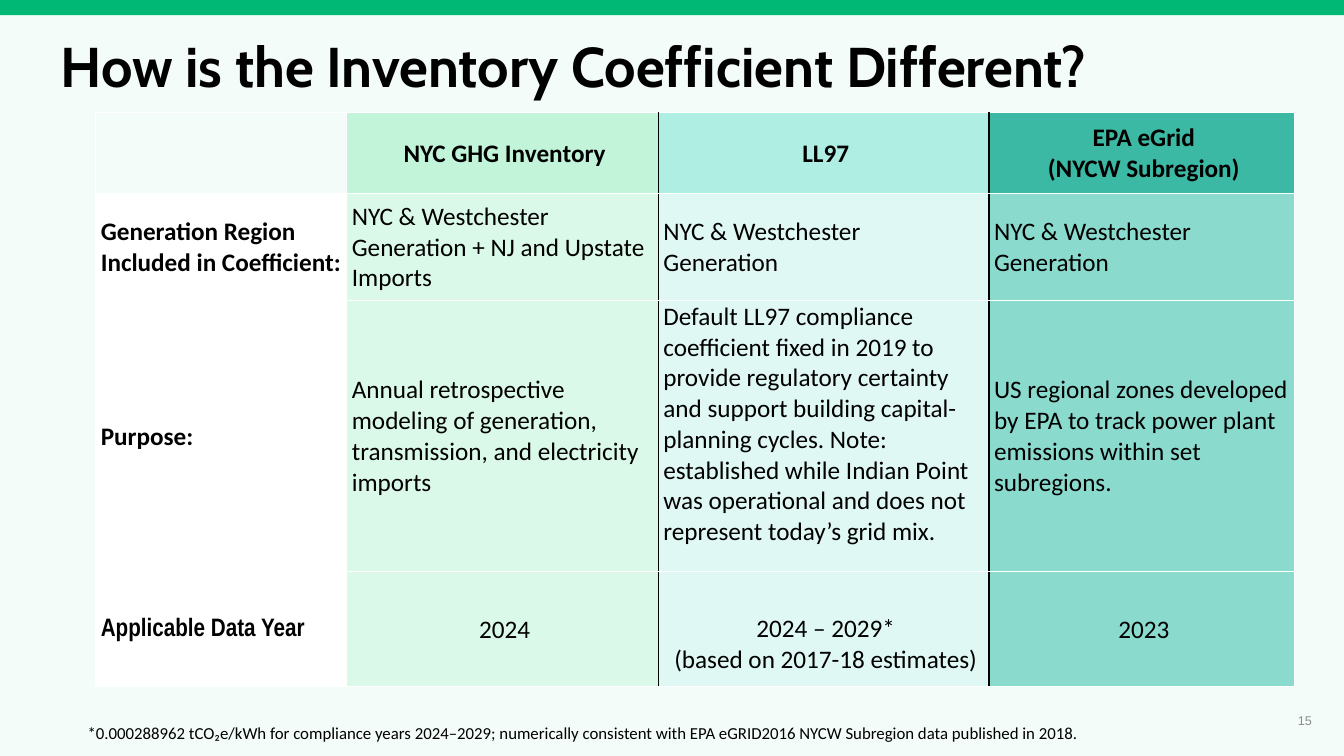
"""Build a slide comparing the NYC GHG Inventory, LL97 and EPA eGrid coefficients."""
from dataclasses import dataclass

from lxml.etree import SubElement
from pptx import Presentation
from pptx.dml.color import RGBColor
from pptx.enum.shapes import MSO_SHAPE
from pptx.enum.text import MSO_ANCHOR as Anchor, MSO_AUTO_SIZE as AutoSize, PP_ALIGN as Align
from pptx.oxml.ns import qn
from pptx.util import Inches, Pt


@dataclass(frozen=True)
class Theme:
    background: str = "F3FCF8"
    bar: str = "00B876"
    ink: str = "000000"
    line: str = "FFFFFF"
    page: str = "8C8C8C"
    label_fill: str = "FFFFFF"
    header_fills: tuple = (None, "C2F4D9", "AEEEE3", "3BB9A4")
    body_fills: tuple = ("FFFFFF", "DBF9E9", "E0F8F4", "8ADACD")
    title_size: int = 40
    table_size: int = 18
    note_size: int = 12
    page_size: int = 9


THEME = Theme()


def style(paragraph, font, size, color=THEME.ink, bold=False, align=Align.LEFT):
    paragraph.alignment = align
    paragraph.font.name = font
    paragraph.font.size = Pt(size)
    paragraph.font.bold = bold
    paragraph.font.color.rgb = RGBColor.from_string(color)


def add_border(cell, side, color):
    edge = SubElement(cell._tc.get_or_add_tcPr(), qn(f"a:ln{side}"), w=str(Pt(1)))
    fill = SubElement(edge, qn("a:solidFill"))
    SubElement(fill, qn("a:srgbClr"), val=color)


deck = Presentation()
deck.slide_width, deck.slide_height = Inches(13.33), Inches(7.5)
slide = deck.slides.add_slide(deck.slide_layouts[5])
slide.background.fill.solid()
slide.background.fill.fore_color.rgb = RGBColor.from_string(THEME.background)

top_bar = slide.shapes.add_shape(MSO_SHAPE.RECTANGLE, 0, 0, deck.slide_width, Inches(0.15))
top_bar.shadow.inherit = False
top_bar.fill.solid()
top_bar.fill.fore_color.rgb = RGBColor.from_string(THEME.bar)
top_bar.line.fill.background()

title = slide.shapes.title
title.left, title.top, title.width, title.height = map(Inches, (0.5, 0.34, 12.74, 1.45))
title.text_frame.text = "How is the Inventory Coefficient Different?"
title.text_frame.vertical_anchor = Anchor.TOP
title.text_frame.auto_size = AutoSize.NONE
title.text_frame.paragraphs[0].line_spacing = 0.9
style(title.text_frame.paragraphs[0], "Cabin", THEME.title_size, bold=True)

COLUMN_WIDTHS = (2.49, 3.09, 3.28, 3.03)
ROW_HEIGHTS = (0.8, 1.06, 2.69, 1.14)
COMPARISON = (
    ("", "NYC GHG Inventory", "LL97", "EPA eGrid\v(NYCW Subregion)"),
    (
        "Generation Region Included in Coefficient:",
        "NYC & Westchester Generation + NJ and Upstate Imports",
        "NYC & Westchester\nGeneration",
        "NYC & Westchester Generation",
    ),
    (
        "Purpose:",
        "Annual retrospective modeling of generation, transmission, and electricity imports",
        "Default LL97 compliance coefficient fixed in 2019 to provide regulatory certainty "
        "and support building capital-planning cycles. Note: established while Indian Point "
        "was operational and does not represent today’s grid mix.",
        "US regional zones developed by EPA to track power plant emissions within set subregions.",
    ),
    ("Applicable Data Year", "2024", "2024 – 2029*\v(based on 2017-18 estimates)", "2023"),
)
HEADER, PURPOSE, DATA_YEAR = 0, 2, 3
LABELS, LL97 = 0, 2

comparison = slide.shapes.add_table(
    len(ROW_HEIGHTS), len(COLUMN_WIDTHS), Inches(0.95), Inches(1.12),
    Inches(sum(COLUMN_WIDTHS)), Inches(sum(ROW_HEIGHTS)),
).table
comparison.first_row = comparison.horz_banding = False
for column, width in zip(comparison.columns, COLUMN_WIDTHS):
    column.width = Inches(width)
for row, height in zip(comparison.rows, ROW_HEIGHTS):
    row.height = Inches(height)

for r, texts in enumerate(COMPARISON):
    fills = THEME.header_fills if r == HEADER else THEME.body_fills
    for c, (text, fill) in enumerate(zip(texts, fills)):
        cell = comparison.cell(r, c)
        cell.text = text
        cell.vertical_anchor = Anchor.MIDDLE
        cell.margin_left, cell.margin_right = Inches(0.05), Inches(0.01)
        cell.margin_top, cell.margin_bottom = Inches(0.01), 0
        left = THEME.ink if c >= LL97 else THEME.line
        right = THEME.ink if c in (LL97 - 1, LL97) else THEME.line
        for side, color in zip("LRTB", (left, right, THEME.line, THEME.line)):
            add_border(cell, side, color)
        if fill:
            cell.fill.solid()
            cell.fill.fore_color.rgb = RGBColor.from_string(fill)
        else:
            cell.fill.background()
        centred = r == HEADER or (r == DATA_YEAR and c != LABELS)
        font = "Arial Narrow" if (r, c) == (DATA_YEAR, LABELS) else "Calibri"
        for paragraph in cell.text_frame.paragraphs:
            style(paragraph, font, THEME.table_size, bold=r == HEADER or c == LABELS,
                  align=Align.CENTER if centred else Align.LEFT)
comparison.cell(PURPOSE, LL97).margin_bottom = Inches(0.24)
comparison.cell(DATA_YEAR, LL97).margin_top = Inches(0.31)

SMALL_TEXTS = (
    ("15", (10.11, 6.95, 3, 0.4), "Arial", THEME.page_size, THEME.page, Align.RIGHT, Anchor.MIDDLE),
    ("*0.000288962 tCO₂e/kWh for compliance years 2024–2029; numerically consistent with "
     "EPA eGRID2016 NYCW Subregion data published in 2018.",
     (0.77, 7.12, 12.46, 0.3), "Calibri", THEME.note_size, THEME.ink, Align.LEFT, Anchor.TOP),
)
for text, place, font, size, color, align, anchor in SMALL_TEXTS:
    frame = slide.shapes.add_textbox(*map(Inches, place)).text_frame
    frame.word_wrap = True
    frame.vertical_anchor = anchor
    frame.text = text
    style(frame.paragraphs[0], font, size, color, align=align)

deck.save("out.pptx")
